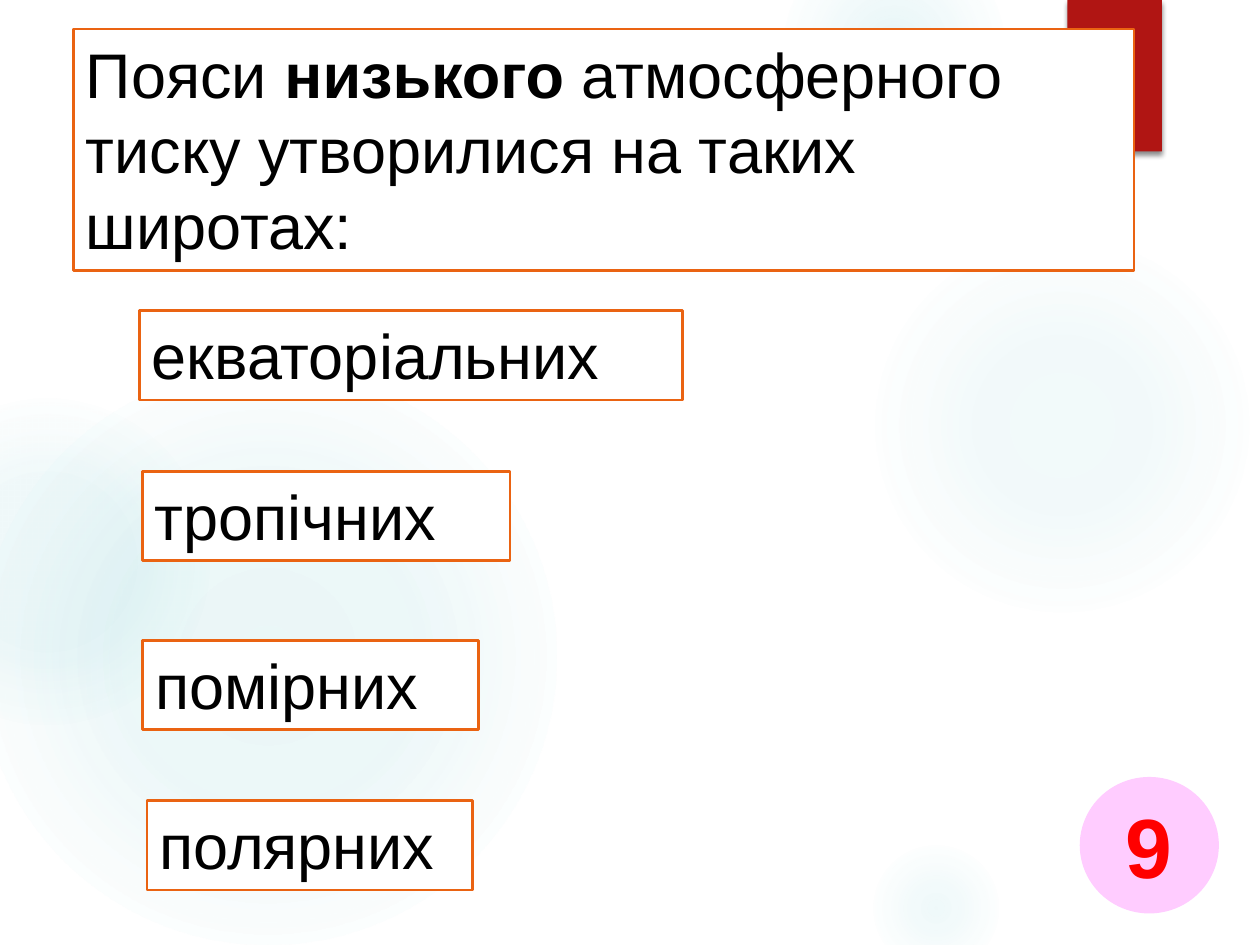
from dataclasses import dataclass

from pptx import Presentation
from pptx.dml.color import RGBColor
from pptx.enum.shapes import MSO_SHAPE
from pptx.enum.text import MSO_ANCHOR, MSO_AUTO_SIZE, PP_ALIGN
from pptx.oxml import parse_xml
from pptx.oxml.ns import nsdecls, qn
from pptx.shapes.autoshape import Shape
from pptx.slide import Slide
from pptx.text.text import _Paragraph as Paragraph
from pptx.util import Pt

COLORS = {
    "background": "FFFFFF",
    "glow": "4CB9C3",
    "ribbon": "B01513",
    "shadow": "000000",
    "border": "EA6312",
    "text": "000000",
    "badge": "FFCCFF",
    "number": "FF0000",
}
FONT = "Arial"


@dataclass(frozen=True)
class Glow:
    """A round spot that fades out; stops are (position, opacity) in percent."""
    left: float
    top: float
    diameter: float
    stops: tuple[tuple[int, int], ...]


@dataclass(frozen=True)
class TextCard:
    """A bordered box; each paragraph is a list of (text, bold) runs."""
    left: float
    top: float
    width: float
    height: float
    paragraphs: tuple[tuple[tuple[str, bool], ...], ...]


GLOWS = [
    Glow(496, 132, 222, ((0, 7), (36, 6), (69, 0), (100, 0))),
    Glow(448, -36, 126, ((0, 14), (36, 7), (73, 0), (100, 0))),
    Glow(496, 480, 78, ((0, 9), (36, 5), (66, 0), (100, 0))),
    Glow(-12, 210, 330, ((0, 11), (36, 10), (75, 0), (100, 0))),
    Glow(-66, 228, 186, ((0, 8), (36, 8), (72, 0), (100, 0))),
]

QUESTION = TextCard(42, 16.7, 606, 138, (
    (("Пояси ", False), ("низького", True),
     (" атмосферного тиску утворилися на таких", False)),
    (("широтах:", False),),
))


def answer(left: float, top: float, width: float, text: str) -> TextCard:
    return TextCard(left, top, width, 51, (((text, False),),))


ANSWERS = [
    answer(79.7, 177.5, 310.5, "екваторіальних"),
    answer(81.5, 269.5, 210, "тропічних"),
    answer(81.5, 366, 192, "помірних"),
    answer(84, 457.5, 186, "полярних"),
]


def color(name: str) -> RGBColor:
    return RGBColor.from_string(COLORS[name])


def add_plain_shape(slide: Slide, kind: MSO_SHAPE, left: float, top: float,
                    width: float, height: float, fill: str) -> Shape:
    shape = slide.shapes.add_shape(kind, Pt(left), Pt(top), Pt(width), Pt(height))
    shape.shadow.inherit = False
    shape.fill.solid()
    shape.fill.fore_color.rgb = color(fill)
    shape.line.fill.background()
    return shape


def set_font(paragraph: Paragraph, size: float, color_name: str) -> None:
    paragraph.font.name = FONT
    paragraph.font.size = Pt(size)
    paragraph.font.color.rgb = color(color_name)


def add_glow(slide: Slide, glow: Glow) -> None:
    shape = add_plain_shape(slide, MSO_SHAPE.OVAL, glow.left, glow.top,
                            glow.diameter, glow.diameter, "glow")
    stops = "".join(
        f'<a:gs pos="{position * 1000}"><a:srgbClr val="{COLORS["glow"]}">'
        f'<a:alpha val="{opacity * 1000}"/></a:srgbClr></a:gs>'
        for position, opacity in glow.stops
    )
    gradient = parse_xml(
        f'<a:gradFill {nsdecls("a")} rotWithShape="1"><a:gsLst>{stops}</a:gsLst>'
        '<a:path path="circle">'
        '<a:fillToRect l="50000" t="50000" r="50000" b="50000"/>'
        '</a:path></a:gradFill>'
    )
    properties = shape.element.spPr
    properties.replace(properties.find(qn("a:solidFill")), gradient)


def add_ribbon(slide: Slide) -> None:
    ribbon = add_plain_shape(slide, MSO_SHAPE.RECTANGLE, 610, 0, 54, 86.5, "ribbon")
    ribbon.element.spPr.find(qn("a:effectLst")).append(parse_xml(
        f'<a:outerShdw {nsdecls("a")} blurRad="{Pt(3)}" dist="{Pt(2)}" '
        f'dir="5400000" rotWithShape="0"><a:srgbClr val="{COLORS["shadow"]}">'
        '<a:alpha val="45000"/></a:srgbClr></a:outerShdw>'
    ))


def add_text_card(slide: Slide, card: TextCard) -> None:
    shape = add_plain_shape(slide, MSO_SHAPE.RECTANGLE, card.left, card.top,
                            card.width, card.height, "background")
    shape.line.color.rgb = color("border")
    shape.line.width = Pt(1.5)
    frame = shape.text_frame
    frame.word_wrap = True
    frame.auto_size = MSO_AUTO_SIZE.SHAPE_TO_FIT_TEXT
    frame.vertical_anchor = MSO_ANCHOR.TOP
    for index, runs in enumerate(card.paragraphs):
        paragraph = frame.add_paragraph() if index else frame.paragraphs[0]
        paragraph.alignment = PP_ALIGN.LEFT
        set_font(paragraph, 36, "text")
        for text, bold in runs:
            run = paragraph.add_run()
            run.text = text
            run.font.bold = bold


def add_number_badge(slide: Slide, number: str) -> None:
    badge = add_plain_shape(slide, MSO_SHAPE.OVAL, 617, 444, 79.5, 78, "badge")
    badge.text_frame.vertical_anchor = MSO_ANCHOR.MIDDLE
    paragraph = badge.text_frame.paragraphs[0]
    paragraph.text = number
    paragraph.alignment = PP_ALIGN.CENTER
    set_font(paragraph, 48, "number")
    paragraph.font.bold = True


def main() -> None:
    presentation = Presentation()
    presentation.slide_width = Pt(720)
    presentation.slide_height = Pt(540)
    slide = presentation.slides.add_slide(presentation.slide_layouts[6])
    slide.background.fill.solid()
    slide.background.fill.fore_color.rgb = color("background")

    for glow in GLOWS:
        add_glow(slide, glow)
    add_ribbon(slide)
    add_text_card(slide, QUESTION)
    add_number_badge(slide, "9")
    for card in ANSWERS:
        add_text_card(slide, card)

    presentation.save("out.pptx")


if __name__ == "__main__":
    main()
